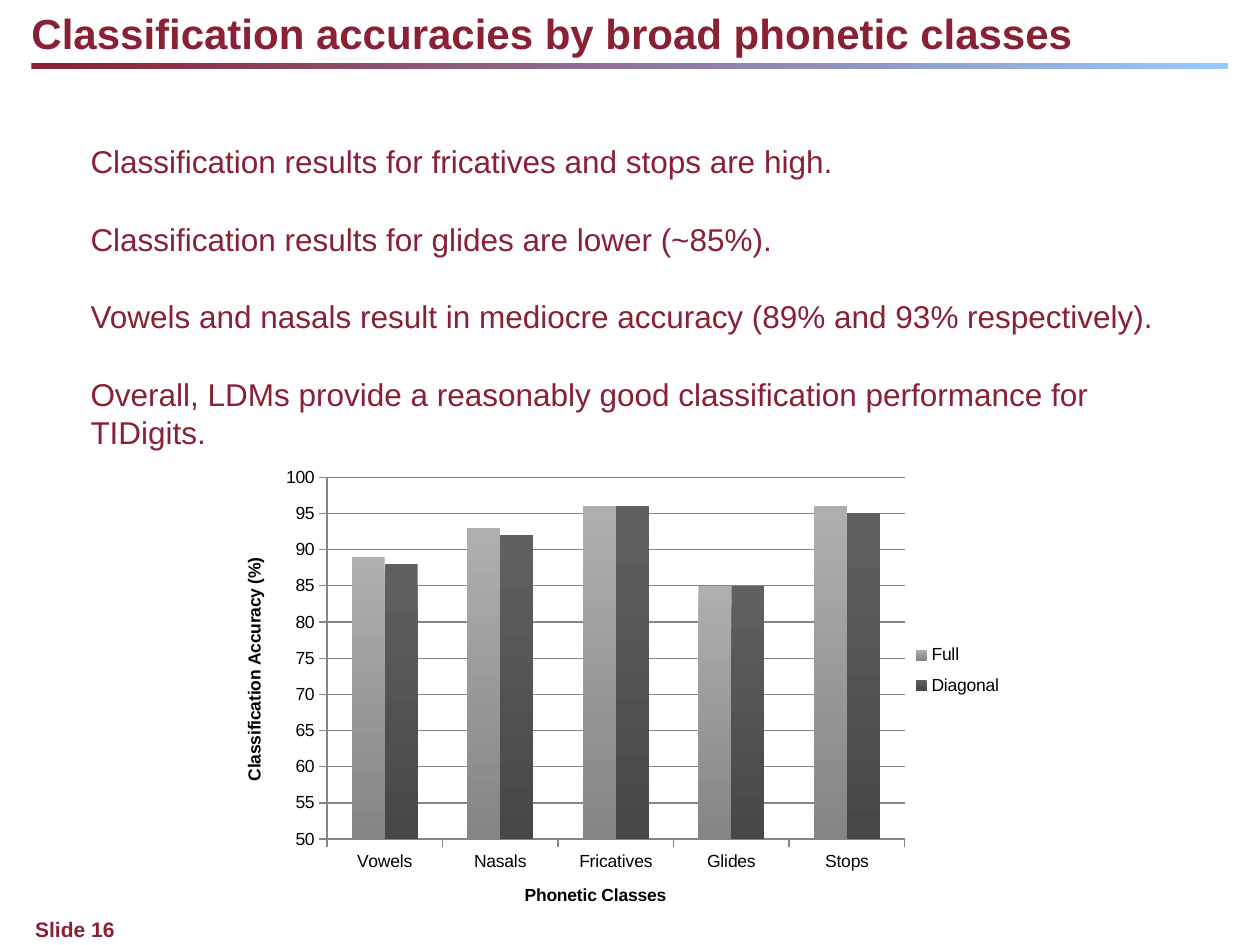
from dataclasses import dataclass
from lxml.etree import SubElement as Sub
from pptx import Presentation
from pptx.chart.data import CategoryChartData as Data
from pptx.dml.color import RGBColor as RGB
from pptx.enum.chart import XL_CHART_TYPE as Kind, XL_LEGEND_POSITION as Side, XL_TICK_MARK as Tick
from pptx.enum.shapes import MSO_SHAPE as Form
from pptx.enum.text import MSO_ANCHOR as Anchor
from pptx.oxml.ns import qn
from pptx.util import Inches, Pt

WIDE, HIGH = Inches(10), Inches(7.5)


@dataclass(frozen=True)
class Theme:
    face: str = "Arial"
    main: str = "892034"
    sky: str = "95CAFF"
    ink: str = "000000"
    grid: str = "868686"
    bars: tuple = (("AFAFAF", "858585"), ("606060", "474747"))
    head: int = 24
    body: int = 18
    foot: int = 12
    note: int = 10


LOOK = Theme()
POINTS = (
    "Classification results for fricatives and stops are high.",
    "Classification results for glides are lower (~85%).",
    "Vowels and nasals result in mediocre accuracy (89% and 93% respectively).",
    "Overall, LDMs provide a reasonably good classification performance for TIDigits.",
)
CLASSES = ("Vowels", "Nasals", "Fricatives", "Glides", "Stops")
RATES = {"Full": (89, 93, 96, 85, 96), "Diagonal": (88, 92, 96, 85, 95)}


def share(x, y, w, h):
    """Turn shares of the slide's size into a box of lengths."""
    return int(x * WIDE), int(y * HIGH), int(w * WIDE), int(h * HIGH)


def apply(item, form):
    for key, value in form.items():
        setattr(item, key, value)


def style(font, size, color, bold=False):
    apply(font, {"name": LOOK.face, "size": Pt(size), "bold": bold})
    font.color.rgb = RGB.from_string(color)


def blend(fill, colors, angle):
    fill.gradient()
    fill.gradient_angle = angle
    for stop, color in zip(fill.gradient_stops, colors):
        stop.color.rgb = RGB.from_string(color)


def write(slide, box, lines, size, bold=False, inset=(0, 0), gap=0, lead=1.0):
    frame = slide.shapes.add_textbox(*box).text_frame
    side, top = map(Inches, inset)
    apply(frame, {"word_wrap": True, "vertical_anchor": Anchor.TOP,
                  "margin_left": side, "margin_right": side,
                  "margin_top": top, "margin_bottom": top})
    for i, line in enumerate(lines):
        para = frame.add_paragraph() if i else frame.paragraphs[0]
        apply(para, {"line_spacing": lead, "space_before": Pt(gap if i else 0)})
        run = para.add_run()
        run.text = line
        style(run.font, size, LOOK.main, bold)


def header(slide, box):
    x, y, w, h = box
    rule = slide.shapes.add_shape(Form.RECTANGLE, x, y + int(h * 0.9), w, int(h * 0.1))
    rule.shadow.inherit = False
    rule.line.fill.background()
    blend(rule.fill, (LOOK.main, LOOK.sky), 0)
    write(slide, (x, y, w, int(h * 0.8)),
          ["Classification accuracies by broad phonetic classes"], LOOK.head, True)


def place(part, x, y, w, h, inner=False):
    """Fix a chart part at shares of the chart's size."""
    layout = part.find(qn("c:layout"))
    if layout is None:
        layout = Sub(part, qn("c:layout"))
        part.insert(1 if part.tag == qn("c:legend") else 0, layout)
    spot = Sub(layout, qn("c:manualLayout"))
    rows = [("layoutTarget", "inner")] if inner else []
    rows += [("xMode", "edge"), ("yMode", "edge"), ("x", x), ("y", y), ("w", w), ("h", h)]
    for name, value in rows:
        Sub(spot, qn("c:" + name)).set("val", str(value))


def dress(axis, title):
    frame = axis.axis_title.text_frame
    frame.text = title
    style(frame.paragraphs[0].runs[0].font, LOOK.note, LOOK.ink, True)
    apply(axis, {"major_tick_mark": Tick.OUTSIDE, "minor_tick_mark": Tick.NONE})
    axis.format.line.color.rgb = RGB.from_string(LOOK.grid)


def graph(slide, box):
    data = Data()
    data.categories = CLASSES
    for name, values in RATES.items():
        data.add_series(name, values)
    chart = slide.shapes.add_chart(Kind.COLUMN_CLUSTERED, *box, data).chart
    style(chart.font, LOOK.note, LOOK.ink)
    apply(chart, {"has_title": False, "has_legend": True})
    apply(chart.legend, {"position": Side.RIGHT, "include_in_layout": False})

    dress(chart.category_axis, "Phonetic Classes")
    axis = chart.value_axis
    dress(axis, "Classification Accuracy (%)")
    apply(axis, {"minimum_scale": 50, "maximum_scale": 100, "major_unit": 5,
                 "has_major_gridlines": True})
    axis.major_gridlines.format.line.color.rgb = RGB.from_string(LOOK.grid)

    plot = chart.plots[0]
    apply(plot, {"gap_width": 150, "overlap": 0, "vary_by_categories": False})
    for series, colors in zip(plot.series, LOOK.bars):
        blend(series.format.fill, colors, 270)

    root = chart.element.chart
    place(root.plotArea, 0.14, 0.04, 0.71, 0.76, inner=True)
    place(root.find(qn("c:legend")), 0.84, 0.37, 0.15, 0.15)


def main():
    deck = Presentation()
    apply(deck, {"slide_width": WIDE, "slide_height": HIGH})
    slide = deck.slides.add_slide(deck.slide_layouts[6])
    header(slide, share(0.025, 0.008, 0.95, 0.065))
    write(slide, share(0.028, 0.97, 0.89, 0.027), ["Slide 16"], LOOK.foot, True)
    graph(slide, share(0.169, 0.485, 0.646, 0.504))
    write(slide, share(0.062, 0.143, 0.872, 0.336), POINTS, LOOK.body,
          inset=(0.1, 0.05), gap=22, lead=1.03)
    deck.save("out.pptx")


if __name__ == "__main__":
    main()
